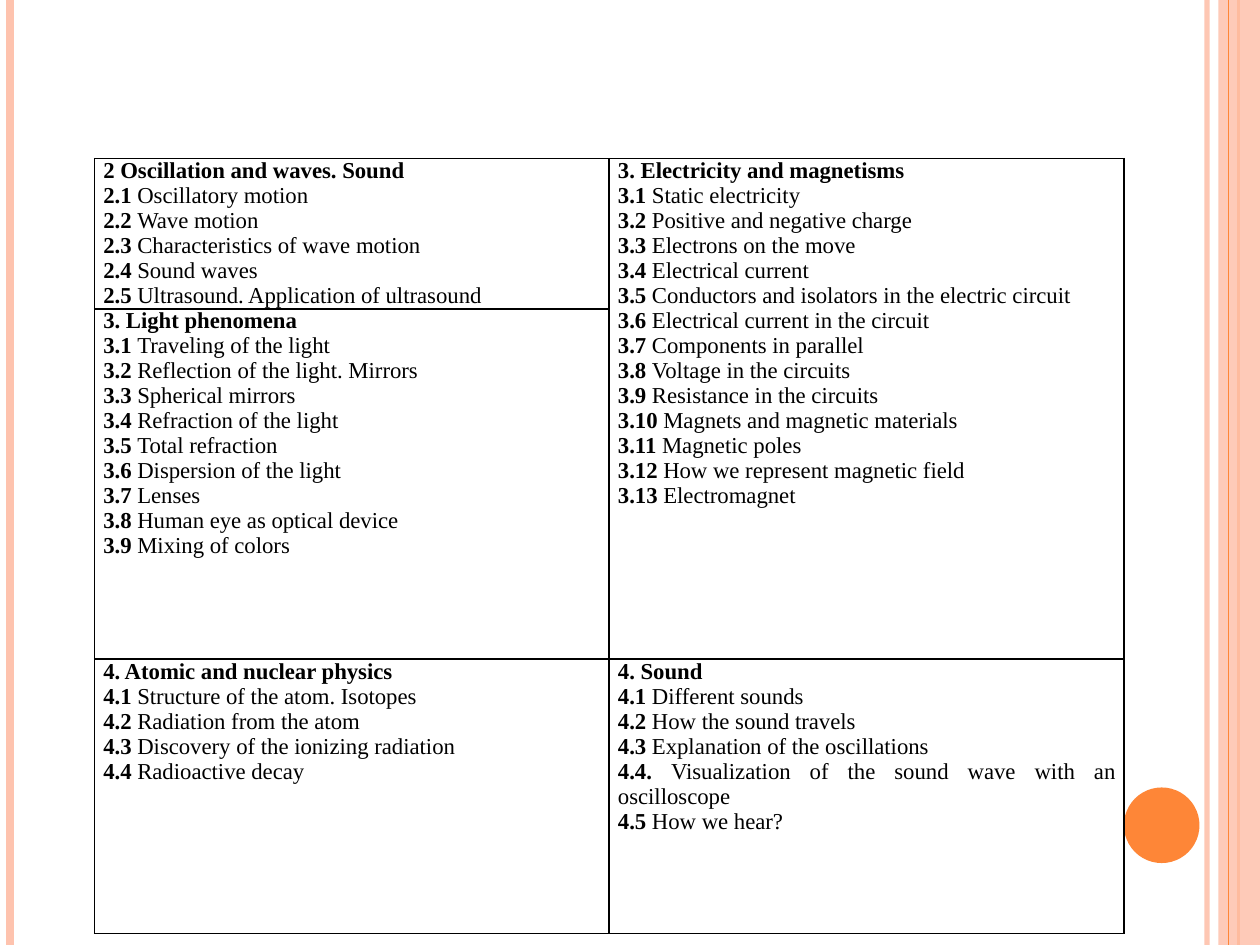
import pptx
import pptx.util
import pptx.dml.color
import pptx.enum.shapes
import pptx.enum.text
import pptx.oxml
import pptx.oxml.ns
from pptx.util import Inches

COLORS = {"peach": "FEC3AE", "orange": "FE8637", "black": "000000"}
FONT = "Times New Roman"
RULES = [
    (9.58, "peach", 3, 93),
    (0.08, "peach", 4.5, 100),
    (9.83, "orange", 1.5, 100),
]
OSCILLATION = [
    "2 Oscillation and waves. Sound",
    "2.1 Oscillatory motion",
    "2.2 Wave motion",
    "2.3 Characteristics of wave motion",
    "2.4 Sound waves",
    "2.5 Ultrasound. Application of ultrasound",
]
ELECTRICITY = [
    "3. Electricity and magnetisms",
    "3.1 Static electricity",
    "3.2 Positive and negative charge",
    "3.3 Electrons on the move",
    "3.4 Electrical current",
    "3.5 Conductors and isolators in the electric circuit",
    "3.6 Electrical current in the circuit",
    "3.7 Components in parallel",
    "3.8 Voltage in the circuits",
    "3.9 Resistance in the circuits",
    "3.10 Magnets and magnetic materials",
    "3.11 Magnetic poles",
    "3.12 How we represent magnetic field",
    "3.13 Electromagnet",
]
LIGHT = [
    "3. Light phenomena",
    "3.1 Traveling of the light",
    "3.2 Reflection of the light. Mirrors",
    "3.3 Spherical mirrors",
    "3.4 Refraction of the light",
    "3.5 Total refraction",
    "3.6 Dispersion of the light",
    "3.7 Lenses",
    "3.8 Human eye as optical device",
    "3.9 Mixing of colors",
]
ATOMIC = [
    "4. Atomic and nuclear physics",
    "4.1 Structure of the atom. Isotopes",
    "4.2 Radiation from the atom",
    "4.3 Discovery of the ionizing radiation",
    "4.4 Radioactive decay",
]
SOUND = [
    "4. Sound",
    "4.1 Different sounds",
    "4.2 How the sound travels",
    "4.3 Explanation of the oscillations",
    "4.4. Visualization of the sound wave with an oscilloscope",
    "4.5 How we hear?",
]
TOPICS = {
    (0, 0): OSCILLATION,
    (0, 1): ELECTRICITY,
    (1, 0): LIGHT,
    (2, 0): ATOMIC,
    (2, 1): SOUND,
}


def rgb(name):
    return pptx.dml.color.RGBColor.from_string(COLORS[name])


def set_opacity(element, percent):
    if percent < 100:
        clr = next(element.iter(pptx.oxml.ns.qn("a:srgbClr")))
        alpha = clr.makeelement(pptx.oxml.ns.qn("a:alpha"), {"val": str(percent * 1000)})
        clr.append(alpha)


def add_rule(s, x, color, width, opacity=100):
    line = s.shapes.add_connector(
        pptx.enum.shapes.MSO_CONNECTOR.STRAIGHT, Inches(x), 0, Inches(x), Inches(7.5))
    line.line.color.rgb = rgb(color)
    line.line.width = pptx.util.Pt(width)
    sp_pr = line._element.spPr
    set_opacity(sp_pr, opacity)
    sp_pr.append(sp_pr.makeelement(pptx.oxml.ns.qn("a:effectLst"), {}))


def add_shape(s, kind, x, y, w, h, color, opacity=100):
    sp = s.shapes.add_shape(kind, Inches(x), Inches(y), Inches(w), Inches(h))
    sp.shadow.inherit = False
    sp.fill.solid()
    sp.fill.fore_color.rgb = rgb(color)
    sp.line.fill.background()
    set_opacity(sp._element.spPr, opacity)


def add_run(p, text, size=13, color="black", bold=False):
    r = p.add_run()
    r.text = text
    r.font.name = FONT
    r.font.size = pptx.util.Pt(size)
    r.font.bold = bold
    r.font.color.rgb = rgb(color)


def fill_topics(cell, topics):
    tf = cell.text_frame
    for i, topic in enumerate(topics):
        p = tf.paragraphs[0] if i == 0 else tf.add_paragraph()
        p.alignment = pptx.enum.text.PP_ALIGN.JUSTIFY
        if i == 0:
            add_run(p, topic, bold=True)
        else:
            number, space, title = topic.partition(" ")
            add_run(p, number + space, bold=True)
            add_run(p, title)


def format_cell(cell):
    cell.margin_left = cell.margin_right = Inches(0.07)
    cell.margin_top = cell.margin_bottom = 0
    cell.fill.background()
    tc_pr = cell._tc.get_or_add_tcPr()
    for i, side in enumerate("LRTB"):
        border = pptx.oxml.parse_xml(
            f'<a:ln{side} {pptx.oxml.ns.nsdecls("a")} w="12700"><a:solidFill>'
            f'<a:srgbClr val="{COLORS["black"]}"/></a:solidFill></a:ln{side}>')
        tc_pr.insert(i, border)


def add_topic_table(s):
    heights = [1.19, 2.78, 2.18]
    frame = s.shapes.add_table(
        3, 2, Inches(0.75), Inches(1.26), Inches(8.17), Inches(sum(heights)))
    table = frame.table
    table.first_row = table.horz_banding = False
    for row, height in zip(table.rows, heights):
        row.height = Inches(height)
    for cell in table.iter_cells():
        format_cell(cell)
    table.cell(0, 1).merge(table.cell(1, 1))
    for position, topics in TOPICS.items():
        fill_topics(table.cell(*position), topics)


def main():
    prs = pptx.Presentation()
    prs.slide_width, prs.slide_height = Inches(10), Inches(7.5)
    s = prs.slides.add_slide(prs.slide_layouts[6])
    shapes = pptx.enum.shapes.MSO_SHAPE
    for rule in RULES:
        add_rule(s, *rule)
    add_shape(s, shapes.RECTANGLE, 9.67, 0, 0.33, 7.5, "peach", 87)
    add_rule(s, 9.75, "orange", 0.75)
    add_shape(s, shapes.OVAL, 8.92, 6.25, 0.6, 0.6, "orange")
    add_topic_table(s)
    prs.save("out.pptx")


if __name__ == "__main__":
    main()
